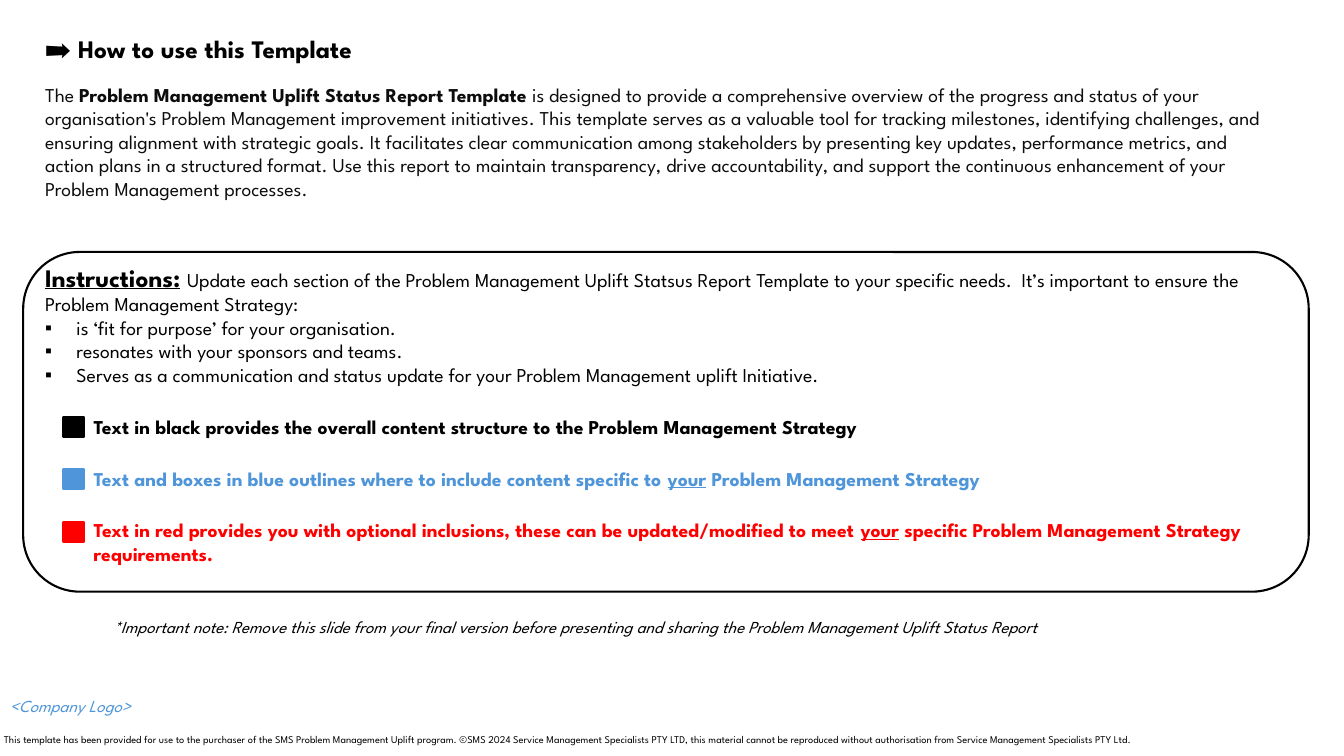
from pptx import Presentation
from pptx.dml.color import RGBColor
from pptx.enum.shapes import MSO_SHAPE
from pptx.enum.text import MSO_AUTO_SIZE
from pptx.oxml.ns import qn
from pptx.util import Pt
from lxml import etree

RECT, ROUND = MSO_SHAPE.RECTANGLE, MSO_SHAPE.ROUNDED_RECTANGLE
GROW = MSO_AUTO_SIZE.SHAPE_TO_FIT_TEXT
PX = 9144  # 100 px to the inch
THEME = {
    "font": "League Spartan",
    "black": RGBColor(0, 0, 0),
    "ink": RGBColor(0x0D, 0x0D, 0x0D),
    "blue": RGBColor(0x4E, 0x95, 0xD9),
    "red": RGBColor(0xFF, 0, 0),
    "title": 18, "body": 14, "note": 12, "foot": 7.4,
}

deck = Presentation()
deck.slide_width, deck.slide_height = 1333 * PX, 750 * PX
slide = deck.slides.add_slide(deck.slide_layouts[6])


def add_box(left, top, width, height, wrap=True):
    box = slide.shapes.add_textbox(left * PX, top * PX, width * PX, height * PX)
    frame = box.text_frame
    frame.word_wrap = wrap
    frame.auto_size = GROW
    return frame


def write(para, text, size, color, bold=None, italic=None):
    """Fill a paragraph; parts between bars are underlined."""
    for i, part in enumerate(text.split("|")):
        run = para.add_run()
        run.text = part
        if i % 2:
            run.font.underline = True
    font = para.font
    font.name, font.size = THEME["font"], Pt(THEME[size])
    font.color.rgb = THEME[color]
    font.bold, font.italic = bold, italic


# Title and body
title = add_box(35, 28, 362, 40, wrap=False)
write(title.paragraphs[0], "➡️ How to use this Template", "title", "black", bold=True)

body = add_box(35, 77, 1247, 313)
intro = body.paragraphs[0]
write(intro, "The ", "body", "ink")
name = intro.add_run()
name.text = "Problem Management Uplift Status Report Template"
name.font.bold = True
intro.add_run().text = (
    " is designed to provide a comprehensive overview of the progress and status of your "
    "organisation's Problem Management improvement initiatives. This template serves as a "
    "valuable tool for tracking milestones, identifying challenges, and ensuring alignment "
    "with strategic goals. It facilitates clear communication among stakeholders by "
    "presenting key updates, performance metrics, and action plans in a structured format. "
    "Use this report to maintain transparency, drive accountability, and support the "
    "continuous enhancement of your Problem Management processes."
)

lead = body.add_paragraph()
lead.space_before = Pt(44)
write(lead, "|Instructions:| ", "body", "black")
for run in lead.runs:
    run.font.size, run.font.bold = Pt(THEME["title"]), True
lead.add_run().text = (
    "Update each section of the Problem Management Uplift Statsus Report Template to your "
    "specific needs.  It’s important to ensure the Problem Management Strategy:"
)

for point in (
    "is ‘fit for purpose’ for your organisation.",
    "resonates with your sponsors and teams.",
    "Serves as a communication and status update for your Problem Management uplift Initiative.",
):
    para = body.add_paragraph()
    props = para._p.get_or_add_pPr()
    props.set("marL", str(31 * PX))
    props.set("indent", str(-31 * PX))
    etree.SubElement(props, qn("a:buFont")).set("typeface", "Arial")
    etree.SubElement(props, qn("a:buChar")).set("char", "▪")
    write(para, point, "body", "black")

# Colour key
for color, mark, top, width, height, wrap, text in (
    ("black", 414, 407, 863, 34, False,
     "Text in black provides the overall content structure to the Problem Management Strategy"),
    ("blue", 465, 458, 1010, 34, False,
     "Text and boxes in blue outlines where to include content specific to |your| "
     "Problem Management Strategy"),
    ("red", 518, 509, 1212, 57, True,
     "Text in red provides you with optional inclusions, these can be updated/modified to "
     "meet |your| specific Problem Management Strategy requirements."),
):
    key = slide.shapes.add_shape(RECT, 63 * PX, mark * PX, 20 * PX, 20 * PX)
    key.shadow.inherit = False
    key.fill.solid()
    key.fill.fore_color.rgb = key.line.color.rgb = THEME[color]
    key.line.width = Pt(1.5)
    label = add_box(83, top, width, height, wrap)
    write(label.paragraphs[0], text, "body", color, bold=True)

# Frame round the instructions
panel = slide.shapes.add_shape(ROUND, 23 * PX, 250 * PX, 1275 * PX, 337 * PX)
panel.shadow.inherit = False
panel.fill.background()
panel.line.color.rgb = THEME["black"]
panel.line.width = Pt(1.5)

# Notes at the bottom
for place, text, size, color, italic in (
    ((103, 607, 1116, 30),
     "*Important note: Remove this slide from your final version before presenting and "
     "sharing the Problem Management Uplift Status Report", "note", "black", True),
    ((-6, 722, 1366, 23),
     "This template has been provided for use to the purchaser of the SMS Problem Management "
     "Uplift program. ©SMS 2024 Service Management Specialists PTY LTD, this material cannot "
     "be reproduced without authorisation from Service Management Specialists PTY Ltd.",
     "foot", "black", None),
    ((0, 685, 185, 30), "<Company Logo>", "note", "blue", True),
):
    write(add_box(*place).paragraphs[0], text, size, color, italic=italic)

deck.save("out.pptx")
